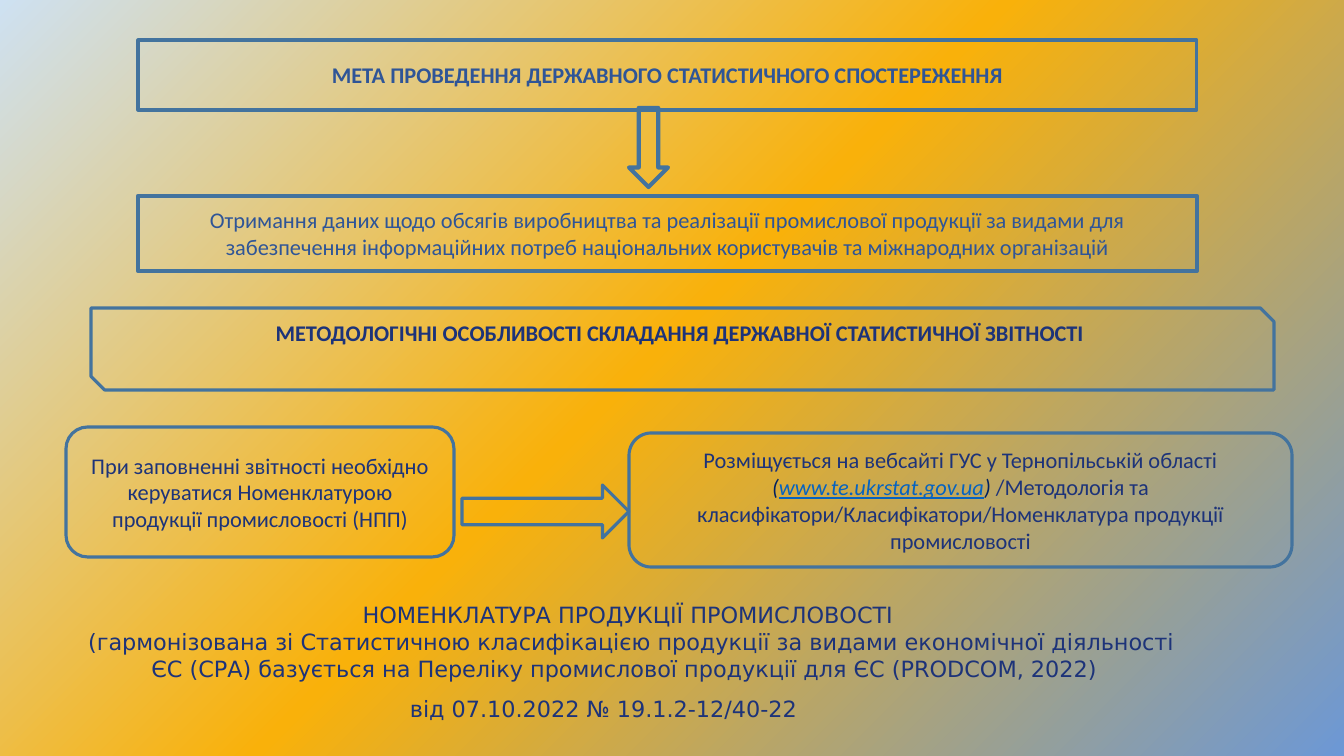
from pptx import Presentation
from pptx.dml.color import RGBColor
from pptx.enum.shapes import MSO_SHAPE as Kind
from pptx.enum.text import MSO_ANCHOR as Anchor, MSO_AUTO_SIZE as Fit, PP_ALIGN as Align
from pptx.oxml import parse_xml
from pptx.util import Pt

COLORS = {"line": "43739E", "navy": "1D3379", "blue": "2F5597",
          "dark": "002060", "link": "0563C1"}
STOPS = [(0, "1D3379"), (0, "6C98D6"), (52, "F9B10A"), (100, "CEE1F2")]
PX = 914400 / 100.8

HEAD = "МЕТА ПРОВЕДЕННЯ ДЕРЖАВНОГО СТАТИСТИЧНОГО СПОСТЕРЕЖЕННЯ"
GOAL = ("Отримання даних щодо обсягів виробництва та реалізації промислової продукції "
        "за видами для забезпечення інформаційних потреб національних користувачів "
        "та міжнародних організацій")
METHOD = "МЕТОДОЛОГІЧНІ ОСОБЛИВОСТІ СКЛАДАННЯ ДЕРЖАВНОЇ СТАТИСТИЧНОЇ ЗВІТНОСТІ "
RULE = ("При заповненні звітності необхідно керуватися Номенклатурою "
        "продукції промисловості (НПП)")
SITE = [
    ("Розміщується на вебсайті ГУС у Тернопільській області ", "navy", False, False),
    ("(", "dark", True, False),
    ("www.te.ukrstat.gov.ua", "link", True, True),
    (") ", "dark", True, False),
    ("/Методологія та класифікатори/Класифікатори/Номенклатура продукції промисловості",
     "navy", False, False),
]
NOTE = [
    "НОМЕНКЛАТУРА ПРОДУКЦІЇ ПРОМИСЛОВОСТІ",
    " (гармонізована зі Статистичною класифікацією продукції за видами економічної "
    "діяльності ЄС (СРА) базується на Переліку промислової продукції для ЄС "
    "(PRODСOM, 2022) ",
]
DATE = ["від 07.10.2022 № 19.1.2-12/40-22"]

HEAD_BOX = (138, 40, 1059, 70)
SHAPES = [
    (Kind.SNIP_2_DIAG_RECTANGLE, (91, 308, 1183, 82), 2.25, METHOD, "navy", True, 38),
    (Kind.ROUNDED_RECTANGLE, (66, 427, 388, 130), 2.25, RULE, "navy", False, 5),
    (Kind.RIGHT_ARROW, (462, 485, 167, 53), 2.25, "", "navy", False, 5),
    (Kind.ROUNDED_RECTANGLE, (629, 433, 663, 134), 2.25, SITE, "navy", False, 5),
    (Kind.DOWN_ARROW, (629, 108, 39, 79), 3, "", "navy", False, 5),
    (Kind.RECTANGLE, (138, 196, 1059, 75), 3, GOAL, "blue", False, 5),
]
LABELS = [
    ((400, 690, 426, 37), DATE, Align.LEFT, False),
    ((53, 596, 1150, 92), NOTE, Align.CENTER, True),
]


def px(n):
    return round(n * PX)


def rgb(name):
    return RGBColor.from_string(COLORS[name])


def style(para, face, color, align, bold=False):
    para.alignment = align
    font = para.font
    font.name, font.size, font.bold = face, Pt(16), bold
    font.color.rgb = rgb(color)


def frame(shape, width):
    shape.fill.background()
    shape.line.color.rgb = rgb("line")
    shape.line.width = Pt(width)


def write(shape, text, color, bold, bottom):
    body = shape.text_frame
    body.word_wrap = True
    body.auto_size = Fit.NONE
    body.vertical_anchor = Anchor.MIDDLE
    body.margin_bottom = px(bottom)
    para = body.paragraphs[0]
    style(para, "Calibri", color, Align.CENTER, bold)
    if isinstance(text, str):
        para.text = text
        return
    for part, tint, slant, under in text:
        run = para.add_run()
        run.text = part
        run.font.color.rgb = rgb(tint)
        run.font.italic, run.font.underline = slant, under


def paint(slide):
    stops = "".join(f'<a:gs pos="{pos * 1000}"><a:srgbClr val="{tint}"/></a:gs>'
                    for pos, tint in STOPS)
    back = parse_xml(
        '<p:bg xmlns:p="http://schemas.openxmlformats.org/presentationml/2006/main" '
        'xmlns:a="http://schemas.openxmlformats.org/drawingml/2006/main"><p:bgPr>'
        f'<a:gradFill rotWithShape="1"><a:gsLst>{stops}</a:gsLst>'
        '<a:path path="circle"><a:fillToRect l="100000" t="100000"/></a:path>'
        '<a:tileRect r="-100000" b="-100000"/></a:gradFill>'
        '<a:effectLst/></p:bgPr></p:bg>')
    slide.element.cSld.insert(0, back)


def main():
    deck = Presentation()
    deck.slide_width, deck.slide_height = px(1344), px(756)
    slide = deck.slides.add_slide(deck.slide_layouts[5])
    paint(slide)

    title = slide.shapes.title
    title.left, title.top, title.width, title.height = map(px, HEAD_BOX)
    frame(title, 2.25)
    write(title, HEAD, "blue", True, 5)

    for kind, box, width, text, color, bold, bottom in SHAPES:
        shape = slide.shapes.add_shape(kind, *map(px, box))
        shape.shadow.inherit = False
        frame(shape, width)
        if text:
            write(shape, text, color, bold, bottom)

    for box, lines, align, wrap in LABELS:
        body = slide.shapes.add_textbox(*map(px, box)).text_frame
        body.word_wrap = wrap
        body.auto_size = Fit.SHAPE_TO_FIT_TEXT
        body.text = "\n".join(lines)
        for para in body.paragraphs:
            style(para, "DejaVu Sans", "navy", align)

    deck.save("out.pptx")


if __name__ == "__main__":
    main()
